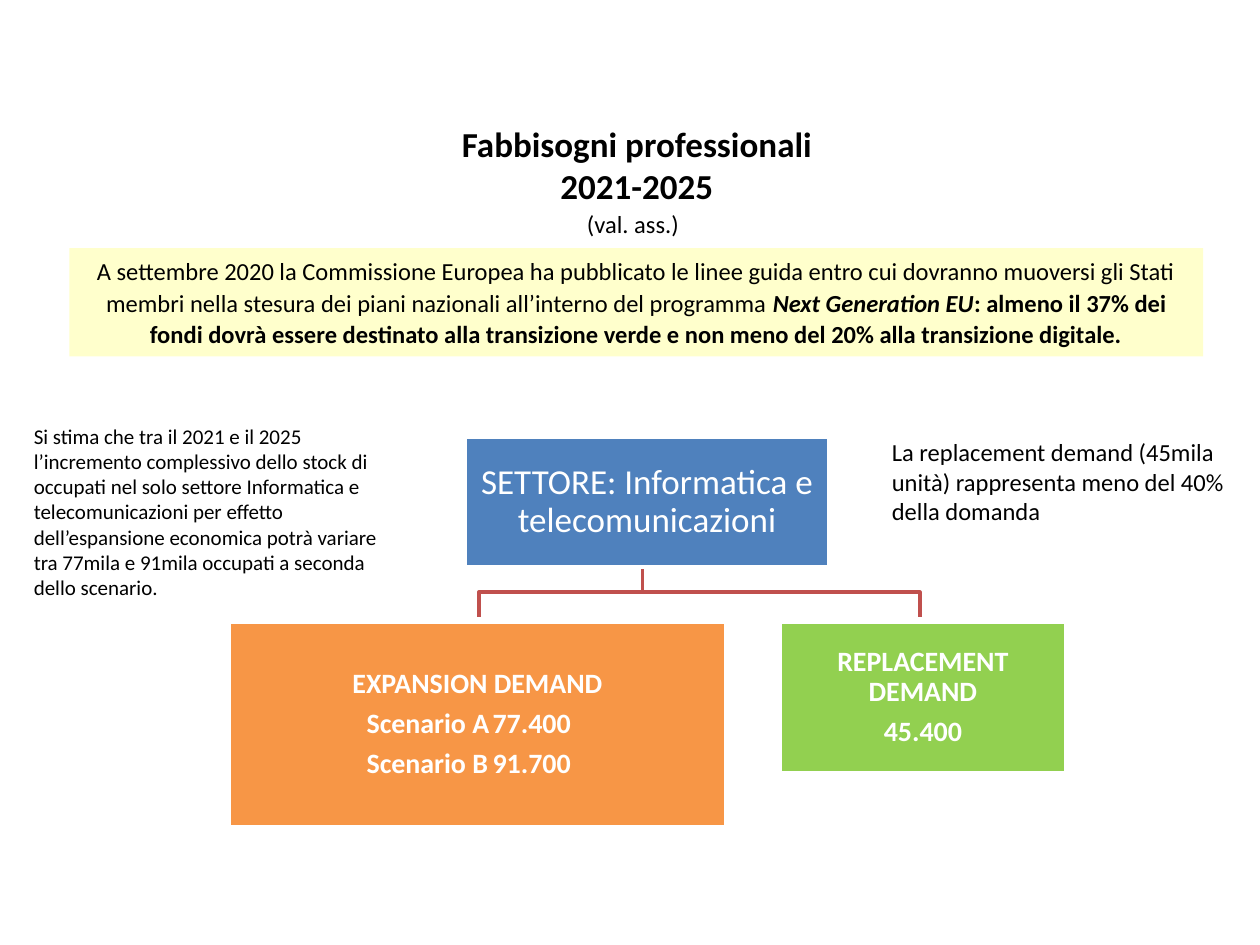
from lxml import etree
from pptx import Presentation
from pptx import util as u
from pptx.dml.color import RGBColor
from pptx.enum import shapes, text
from pptx.oxml.ns import qn

COLORS = {"black": "000000", "white": "FFFFFF", "sector": "4F81BD", "expansion": "F79646",
          "replacement": "92D050", "branch": "C0504D", "note": "FFFFCC"}
CENTER, LEFT = text.PP_ALIGN.CENTER, text.PP_ALIGN.LEFT

deck = Presentation()
deck.slide_width, deck.slide_height = u.Inches(10), u.Inches(7.5)
page = deck.slides.add_slide(deck.slide_layouts[5])
COL, ROW = deck.slide_width / 100, deck.slide_height / 75  # grid of 100 columns by 75 rows


def cells(left, top, width, height):
    return [round(n * unit) for n, unit in zip((left, top, width, height), (COL, ROW, COL, ROW))]


def write(box, paragraphs, size, color="black", align=LEFT, frame_format=None, **para_format):
    """Each paragraph is a list of (words, font format) spans."""
    frame = box.text_frame
    settings = {"word_wrap": True, "auto_size": text.MSO_AUTO_SIZE.NONE,
                "vertical_anchor": text.MSO_ANCHOR.TOP, **(frame_format or {})}
    for name, value in settings.items():
        setattr(frame, name, value)
    for number, spans in enumerate(paragraphs):
        para = frame.paragraphs[0] if number == 0 else frame.add_paragraph()
        for name, value in {"alignment": align, "space_before": u.Pt(0), **para_format}.items():
            setattr(para, name, value)
        for words, font_format in spans:
            span = para.add_run()
            span.text = words
            span.font.color.rgb = RGBColor.from_string(COLORS[color])
            for name, value in {"name": "Calibri", "size": u.Pt(size), **font_format}.items():
                setattr(span.font, name, value)


BOLD = {"bold": True}

# Title
title = page.shapes.title
title.left, title.top, title.width, title.height = cells(26.7, 9.2, 47.7, 7.7)
write(title, [[("Fabbisogni professionali", BOLD)], [("2021-2025", BOLD)]], 20, align=CENTER)

# Unit of measure and side comments
comments = [
    ((45.6, 16.1, 9.8, 3.4), 14, False, "(val. ass.)"),
    ((1.7, 33.1, 30.4, 15.1), 12, True,
     "Si stima che tra il 2021 e il 2025 l’incremento complessivo dello stock di occupati nel solo "
     "settore Informatica e telecomunicazioni per effetto dell’espansione economica potrà variare "
     "tra 77mila e 91mila occupati a seconda dello scenario."),
    ((69.8, 34.2, 30.2, 8.1), 14, True,
     "La replacement demand (45mila unità) rappresenta meno del 40% della domanda"),
]
for place, size, wrap, words in comments:
    box = page.shapes.add_textbox(*cells(*place))
    write(box, [[(words, {})]], size, frame_format={"word_wrap": wrap})

# Highlighted note
note = page.shapes.add_shape(shapes.MSO_SHAPE.RECTANGLE, *cells(5.5, 19.7, 90, 8.6))
note.shadow.inherit = False
note.fill.solid()
note.fill.fore_color.rgb = RGBColor.from_string(COLORS["note"])
note.line.fill.background()
write(note, [[
    ("A settembre 2020 la Commissione Europea ha pubblicato le linee guida entro cui dovranno "
     "muoversi gli Stati membri nella stesura dei piani nazionali all’interno del programma ", {}),
    ("Next Generation EU", {"bold": True, "italic": True}),
    (": almeno il 37% dei fondi dovrà essere destinato alla transizione verde e non meno del 20% "
     "alla transizione digitale.", BOLD),
]], 14, align=CENTER, line_spacing=1.07, space_after=u.Pt(8))

# Branches from the sector down to each demand
trunk, top, bottom = 51.4, 45, 49.4
middle = (top + bottom) / 2
for branch in (73.3, 37.9):
    builder = page.shapes.build_freeform(trunk, top, scale=(COL, ROW))
    builder.add_line_segments([(trunk, middle), (branch, middle), (branch, bottom)], close=False)
    elbow = builder.convert_to_shape()
    elbow.shadow.inherit = False
    elbow.fill.background()
    elbow.line.color.rgb = RGBColor.from_string(COLORS["branch"])
    elbow.line.width = u.Pt(2)

# Tree boxes
tree = [
    ("sector", (36.9, 34.7, 28.9, 10.3), 20, {}, ["SETTORE: Informatica e telecomunicazioni"]),
    ("expansion", (18.2, 49.4, 39.4, 16.2), 16, BOLD,
     ["EXPANSION DEMAND", "Scenario A\t77.400", "Scenario B\t91.700"]),
    ("replacement", (61.9, 49.4, 22.7, 11.9), 16, BOLD, ["REPLACEMENT DEMAND", "45.400"]),
]
inset = {f"margin_{side}": u.Inches(0.01) for side in ("left", "top", "right", "bottom")}
for kind, place, size, font_format, lines in tree:
    box = page.shapes.add_shape(shapes.MSO_SHAPE.RECTANGLE, *cells(*place))
    box.shadow.inherit = False
    box.fill.solid()
    box.fill.fore_color.rgb = RGBColor.from_string(COLORS[kind])
    box.line.color.rgb = RGBColor.from_string(COLORS["white"])
    box.line.width = u.Pt(2)
    write(box, [[(line, font_format)] for line in lines], size, "white", CENTER,
          {"vertical_anchor": text.MSO_ANCHOR.MIDDLE, **inset},
          line_spacing=0.9, space_after=u.Pt(size * 0.35))
    # Scenario rows: indented names, figures at a tab stop
    for para in box.text_frame.paragraphs:
        if "\t" in para.text:
            para.alignment = LEFT
            props = para._p.get_or_add_pPr()
            props.set("marL", str(u.Inches(1.08)))
            props.set("indent", "0")
            stops = etree.SubElement(props, qn("a:tabLst"))
            etree.SubElement(stops, qn("a:tab"), pos=str(u.Inches(2.2)), algn="l")

deck.save("out.pptx")
